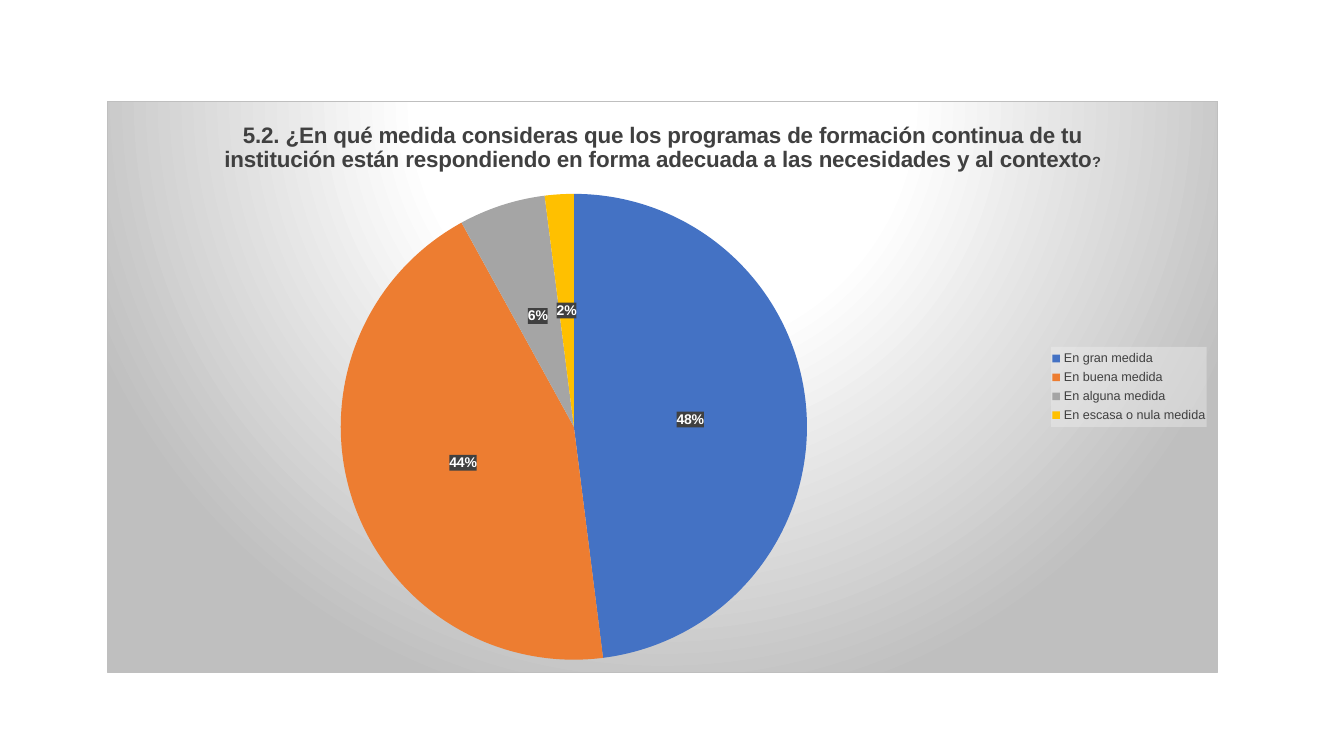
from dataclasses import dataclass

import pptx
import pptx.chart.data
import pptx.dml.color
import pptx.enum.chart
import pptx.oxml
import pptx.oxml.ns
import pptx.util
from pptx.util import Cm


@dataclass(frozen=True)
class Theme:
    font: str = "Arial"
    text: str = "404040"
    label_text: str = "FFFFFF"
    edge: str = "BFBFBF"
    center: str = "FFFFFF"
    legend_fill: str = "F2F2F2"
    slices: tuple = ("4472C4", "ED7D31", "A5A5A5", "FFC000")
    title_size: float = 16
    mark_size: float = 10.5
    label_size: float = 10
    legend_size: float = 9


THEME = Theme()
QUESTION = ("5.2. ¿En qué medida consideras que los programas de formación continua "
            "de tu institución están respondiendo en forma adecuada a las "
            "necesidades y al contexto")
ANSWERS = {"En gran medida": 48, "En buena medida": 44,
           "En alguna medida": 6, "En escasa o nula medida": 2}


def rgb(color):
    return pptx.dml.color.RGBColor.from_string(color)


def style_font(font, size, color, bold=False):
    values = {"name": THEME.font, "size": pptx.util.Pt(size), "bold": bold}
    for name, value in values.items():
        setattr(font, name, value)
    font.color.rgb = rgb(color)


def parse(xml):
    """Parse a chart fragment whose root tag carries no namespaces yet."""
    tag, rest = xml.split(">", 1)
    return pptx.oxml.parse_xml(f"{tag} {pptx.oxml.ns.nsdecls('c', 'a')}>{rest}")


def set_format(parent, content):
    """Put shape properties before the text properties of a chart part."""
    parent.find(pptx.oxml.ns.qn("c:txPr")).addprevious(
        parse(f"<c:spPr>{content}</c:spPr>"))


def solid(color, alpha):
    return (f'<a:solidFill><a:srgbClr val="{color}">'
            f'<a:alpha val="{alpha * 1000}"/></a:srgbClr></a:solidFill>')


def set_layout(parent, index, x, y, w, h, inner=False):
    """Place a chart part by fractions of the chart's box."""
    for old in parent.findall(pptx.oxml.ns.qn("c:layout")):
        parent.remove(old)
    target = '<c:layoutTarget val="inner"/>' if inner else ""
    modes = '<c:xMode val="edge"/><c:yMode val="edge"/>'
    sizes = "".join(f'<c:{k} val="{v}"/>' for k, v in zip("xywh", (x, y, w, h)))
    parent.insert(index, parse(
        f"<c:layout><c:manualLayout>{target}{modes}{sizes}"
        "</c:manualLayout></c:layout>"))


def format_title(chart):
    chart.has_title = True
    p = chart.chart_title.text_frame.paragraphs[0]
    for text, size in ((QUESTION, THEME.title_size), ("?", THEME.mark_size)):
        r = p.add_run()
        r.text = text
        style_font(r.font, size, THEME.text, bold=True)
    chart.chart_title.include_in_layout = False


def format_background(chart):
    stops = "".join(
        f'<a:gs pos="{pos * 1000}"><a:srgbClr val="{color}"/></a:gs>'
        for pos, color in ((0, THEME.center), (39, THEME.center), (100, THEME.edge)))
    set_format(chart.element, (
        f'<a:gradFill><a:gsLst>{stops}</a:gsLst><a:path path="circle">'
        '<a:fillToRect l="50000" t="-80000" r="50000" b="180000"/></a:path>'
        f'</a:gradFill><a:ln w="{pptx.util.Pt(0.75)}"><a:solidFill>'
        f'<a:srgbClr val="{THEME.edge}"/></a:solidFill></a:ln>'))


def format_slices(chart):
    plot = chart.plots[0]
    plot.vary_by_categories = True
    for i, color in enumerate(THEME.slices):
        fill = plot.series[0].points[i].format.fill
        fill.solid()
        fill.fore_color.rgb = rgb(color)
    labels = plot.series[0].data_labels
    values = {"show_percentage": True, "show_value": False,
              "show_legend_key": False, "number_format": "0%",
              "number_format_is_linked": False,
              "position": pptx.enum.chart.XL_LABEL_POSITION.CENTER}
    for name, value in values.items():
        setattr(labels, name, value)
    style_font(labels.font, THEME.label_size, THEME.label_text, bold=True)
    set_format(labels._element, solid(THEME.text, 90))
    plot_area = chart.element.find(".//" + pptx.oxml.ns.qn("c:plotArea"))
    set_layout(plot_area, 0, 0.21, 0.16, 0.42, 0.82, inner=True)


def format_legend(chart):
    chart.has_legend = True
    legend = chart.legend
    legend.position = pptx.enum.chart.XL_LEGEND_POSITION.RIGHT
    legend.include_in_layout = False
    style_font(legend.font, THEME.legend_size, THEME.text)
    set_format(legend._element, solid(THEME.legend_fill, 39))
    set_layout(legend._element, 1, 0.85, 0.43, 0.14, 0.14)


def add_answers_pie(slide, left, top, width, height):
    data = pptx.chart.data.CategoryChartData()
    data.categories = list(ANSWERS)
    data.add_series("Series 1", list(ANSWERS.values()))
    chart = slide.shapes.add_chart(
        pptx.enum.chart.XL_CHART_TYPE.PIE, left, top, width, height, data).chart
    style_font(chart.font, THEME.label_size, "000000")
    for step in (format_title, format_background, format_slices, format_legend):
        step(chart)


def main():
    prs = pptx.Presentation()
    prs.slide_width, prs.slide_height = Cm(33.87), Cm(19.05)
    s = prs.slides.add_slide(prs.slide_layouts[6])
    add_answers_pie(s, Cm(2.7), Cm(2.55), Cm(28), Cm(14.4))
    prs.save("out.pptx")


if __name__ == "__main__":
    main()
